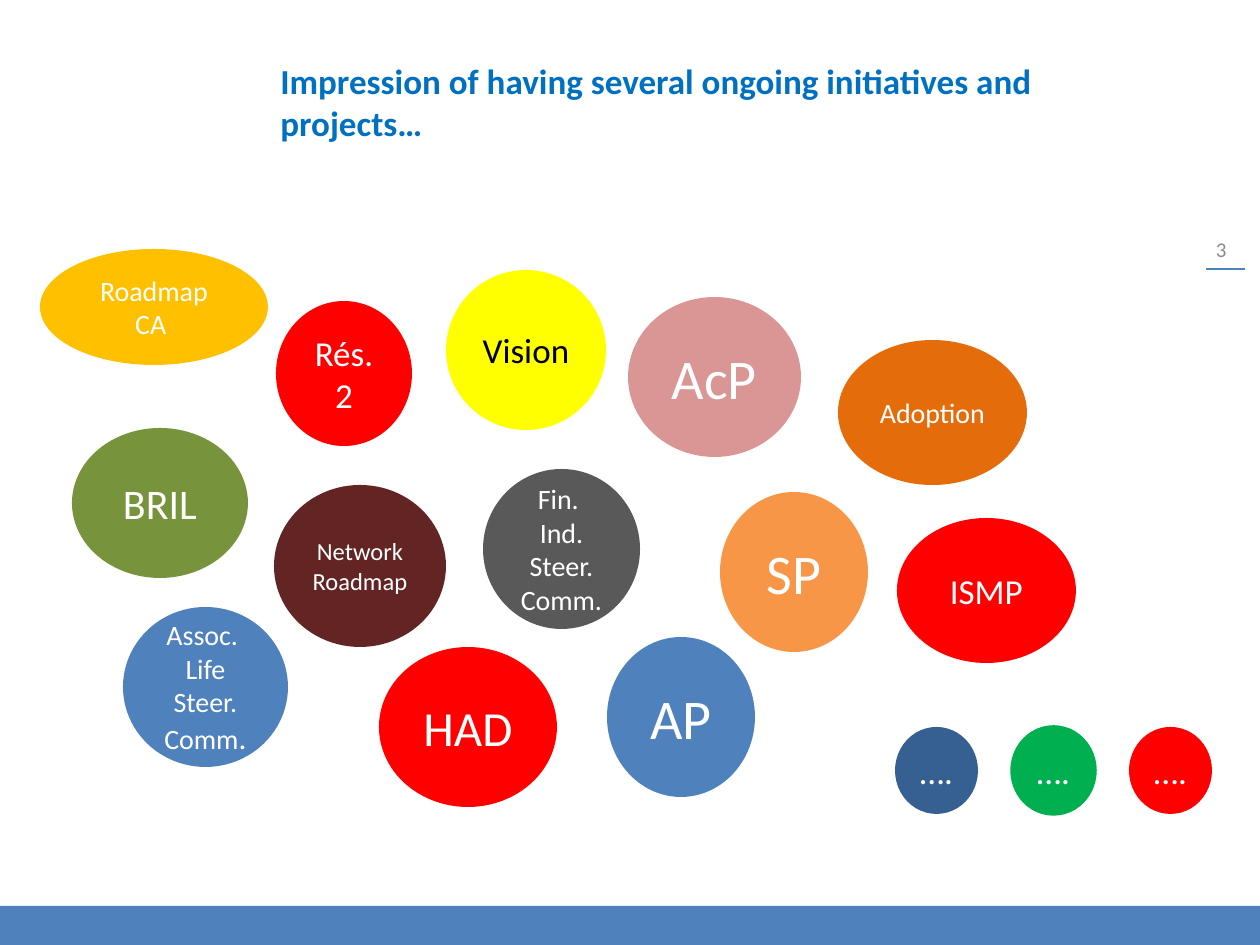
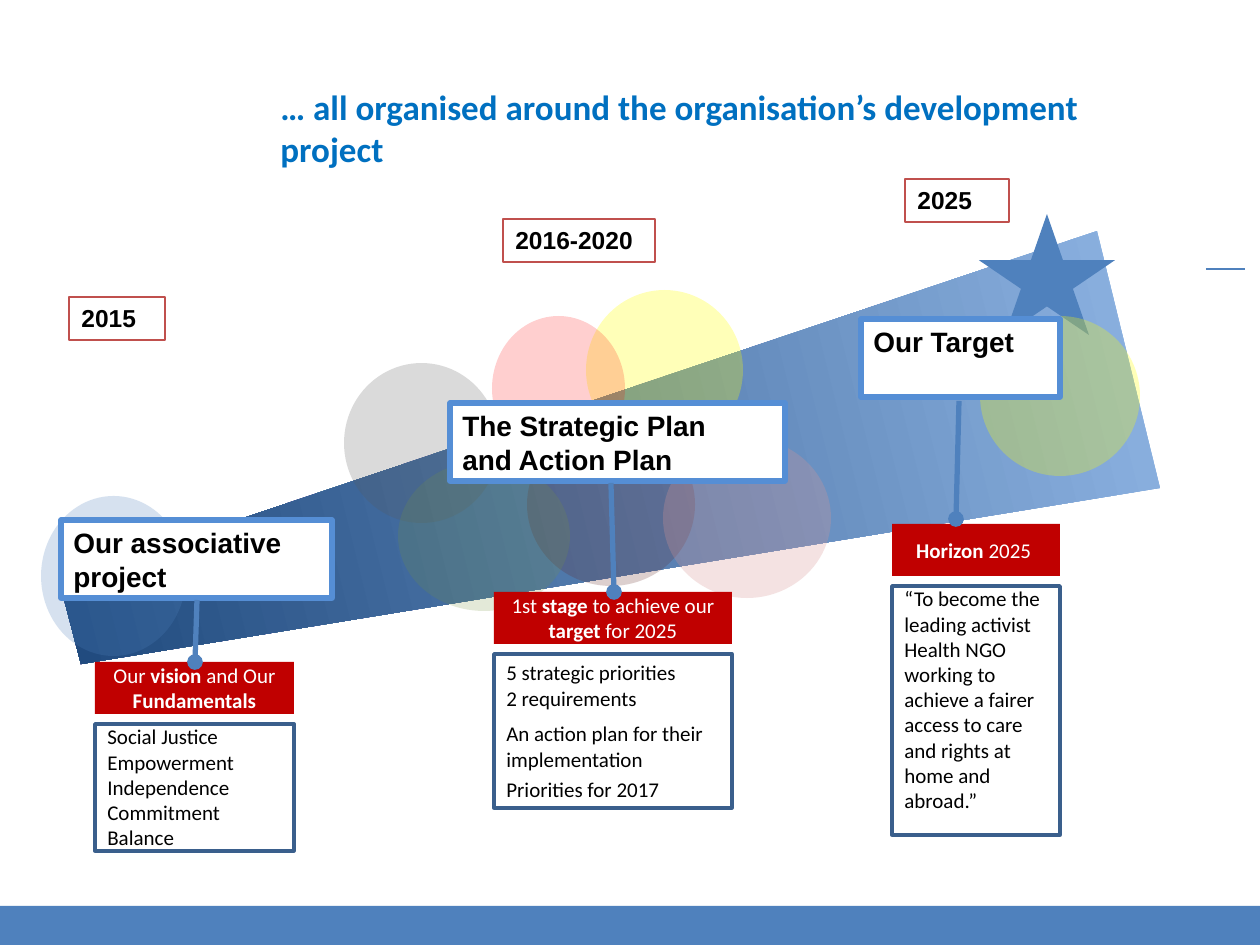
from dataclasses import dataclass

import lxml.etree
import pptx
import pptx.dml.color
import pptx.enum.shapes
import pptx.enum.text
import pptx.oxml.ns
import pptx.util

SCALE = 914400 / 126
KIND = pptx.enum.shapes.MSO_SHAPE
ALIGN = pptx.enum.text.PP_ALIGN
ANCHOR = pptx.enum.text.MSO_ANCHOR


@dataclass(frozen=True)
class Theme:
    blue: str = "4F81BD"
    title: str = "0070C0"
    white: str = "FFFFFF"
    black: str = "000000"
    grey: str = "8C8C8C"
    red: str = "FF0000"
    deep: str = "C00000"
    brick: str = "C0504D"
    frame: str = "558ED5"
    edge: str = "3A5F8C"
    yellow: str = "FFFF00"
    wine: str = "632523"
    coal: str = "595959"
    olive: str = "77933C"
    rose: str = "D99694"
    gold: str = "FFC000"
    peach: str = "F79646"
    rust: str = "E46C0A"
    navy: str = "376092"
    green: str = "00B050"
    light: str = "8EB4E3"
    dark: str = "1F497D"
    body: str = "Calibri"
    head: str = "Arial"
    giant: int = 32
    huge: int = 28
    large: int = 24
    big: int = 20
    mark: int = 18
    label: int = 16
    year: int = 14
    small: int = 12


T = Theme()


@dataclass(frozen=True)
class Box:
    x: int
    y: int
    w: int
    h: int


@dataclass(frozen=True)
class Blob:
    box: Box
    fill: str
    text: str = ""
    size: int = T.big
    ink: str = T.white
    alpha: int = 100
    line: str | None = None


@dataclass(frozen=True)
class Stage:
    """A label, the stem below it, and the red head and card it leads to."""
    label: Box
    name: str
    stem: tuple[int, int, int, int]
    head: Box
    claim: str
    depth: int
    text: str
    inset: int = 0
    gaps: tuple[int, ...] = ()


def emu(px: float) -> int:
    return round(px * SCALE)


def color(code: str) -> pptx.dml.color.RGBColor:
    return pptx.dml.color.RGBColor.from_string(code)


def place(box: Box) -> list[int]:
    return [emu(n) for n in (box.x, box.y, box.w, box.h)]


def draw(slide, kind, box: Box, fill: str | None = None, line: str | None = None,
         width: float = 2, alpha: int = 100):
    shape = slide.shapes.add_shape(kind, *place(box))
    shape.shadow.inherit = False
    if fill:
        shape.fill.solid()
        shape.fill.fore_color.rgb = color(fill)
    else:
        shape.fill.background()
    if alpha < 100:
        tint = shape.element.spPr.find(".//" + pptx.oxml.ns.qn("a:srgbClr"))
        lxml.etree.SubElement(tint, pptx.oxml.ns.qn("a:alpha"), val=str(alpha * 1000))
    if line:
        shape.line.color.rgb = color(line)
        shape.line.width = pptx.util.Pt(width)
    else:
        shape.line.fill.background()
    return shape


def write(shape, text: str, *, size: int, font: str = T.body, ink: str = T.black,
          bold: bool = False, align=ALIGN.LEFT, anchor=ANCHOR.TOP,
          mark: int | None = None, inset: int = 6, gaps: tuple[int, ...] = ()) -> None:
    """Fill a shape; parts between ** are bold, or of size mark if that is given."""
    frame = shape.text_frame
    frame.word_wrap = True
    frame.vertical_anchor = anchor
    frame.margin_top = emu(inset)
    for i, row in enumerate(text.split("\n")):
        para = frame.paragraphs[0] if i == 0 else frame.add_paragraph()
        para.alignment = align
        if i < len(gaps) and gaps[i]:
            para.space_before = pptx.util.Pt(gaps[i])
        for j, part in enumerate(row.split("**")):
            if not part:
                continue
            run = para.add_run()
            run.text = part
            odd = j % 2 == 1
            run.font.name = font
            run.font.size = pptx.util.Pt(mark if odd and mark else size)
            run.font.bold = bold or (odd and not mark)
            run.font.color.rgb = color(ink)


def note(slide, box: Box, text: str, **form) -> None:
    write(slide.shapes.add_textbox(*place(box)), text, **form)


def rule(slide, ends: tuple[int, int, int, int], width: float, dot: bool = False) -> None:
    line = slide.shapes.add_connector(
        pptx.enum.shapes.MSO_CONNECTOR.STRAIGHT, *[emu(n) for n in ends])
    line.line.color.rgb = color(T.blue)
    line.line.width = pptx.util.Pt(width)
    qn = pptx.oxml.ns.qn
    if dot:
        stroke = line.element.spPr.find(qn("a:ln"))
        lxml.etree.SubElement(stroke, qn("a:tailEnd"), type="oval")
    lxml.etree.SubElement(line.element.spPr, qn("a:effectLst"))


def start(deck):
    """Add a slide with the shared rule and bottom band."""
    slide = deck.slides.add_slide(deck.slide_layouts[6])
    rule(slide, (1206, 269, 1245, 269), 1)
    draw(slide, KIND.RECTANGLE, Box(0, 906, 1260, 39), T.blue)
    return slide


def title(slide, top: int, text: str) -> None:
    note(slide, Box(268, top, 917, 97), text, size=T.big, ink=T.title, bold=True)


def bubble(slide, blob: Blob) -> None:
    shape = draw(slide, KIND.OVAL, blob.box, blob.fill, blob.line, alpha=blob.alpha)
    if blob.text:
        write(shape, blob.text, size=blob.size, ink=blob.ink, mark=T.mark,
              align=ALIGN.CENTER, anchor=ANCHOR.MIDDLE)


def wedge(slide) -> None:
    pen = slide.shapes.build_freeform(1097, 231, scale=SCALE)
    pen.add_line_segments([(59, 580), (81, 664), (1160, 488)], close=True)
    shape = pen.convert_to_shape()
    shape.shadow.inherit = False
    shape.line.fill.background()
    shape.fill.gradient()
    shape.fill.gradient_angle = 194
    for stop, code in zip(shape.fill.gradient_stops, (T.light, T.dark)):
        stop.color.rgb = color(code)


def column(slide, stage: Stage) -> None:
    label = draw(slide, KIND.RECTANGLE, stage.label, T.white, T.frame, 3)
    write(label, stage.name, size=T.label, font=T.head, bold=True)
    head = draw(slide, KIND.RECTANGLE, stage.head, T.deep)
    write(head, stage.claim, size=T.small, ink=T.white,
          align=ALIGN.CENTER, anchor=ANCHOR.MIDDLE)
    under = Box(stage.head.x, stage.head.y + 62, stage.head.w, stage.depth)
    card = draw(slide, KIND.RECTANGLE, under, None, T.edge)
    write(card, stage.text, size=T.small, inset=stage.inset, gaps=stage.gaps)
    rule(slide, stage.stem, 3, dot=True)


TOPICS = [
    Blob(Box(446, 270, 160, 160), T.yellow, "Vision", ink=T.black),
    Blob(Box(274, 485, 172, 162), T.wine, "Network Roadmap", T.year),
    Blob(Box(897, 518, 179, 145), T.red, "ISMP"),
    Blob(Box(123, 607, 165, 160), T.blue, "Assoc. \nLife\nSteer.\nComm**.**", T.label),
    Blob(Box(40, 249, 228, 116), T.gold, "Roadmap CA ", T.label),
    Blob(Box(483, 469, 157, 160), T.coal, "Fin. \nInd.\nSteer.\nComm.", T.label),
    Blob(Box(379, 647, 178, 160), T.red, "HAD", T.huge),
    Blob(Box(72, 428, 176, 150), T.olive, "BRIL", T.large),
    Blob(Box(607, 637, 148, 160), T.blue, "AP", T.giant),
    Blob(Box(720, 492, 148, 160), T.peach, "SP", T.giant),
    Blob(Box(628, 297, 173, 160), T.rose, "AcP", T.giant),
    Blob(Box(838, 340, 189, 145), T.rust, "Adoption", T.label),
    Blob(Box(276, 301, 136, 145), T.red, "Rés. 2"),
] + [
    Blob(Box(895 + 117 * i, 727, 83, 87), fill, "….", line=line)
    for i, (fill, line) in enumerate([(T.navy, None), (T.green, T.green), (T.red, None)])
]

VEILS = [
    Blob(Box(980, 316, 160, 160), T.yellow, alpha=28),
    Blob(Box(586, 290, 157, 160), T.yellow, alpha=28),
    Blob(Box(527, 423, 168, 163), T.wine, alpha=22),
    Blob(Box(344, 363, 155, 160), T.coal, alpha=22),
    Blob(Box(398, 461, 172, 150), T.olive, alpha=20),
    Blob(Box(663, 438, 168, 160), T.rose, alpha=27),
    Blob(Box(492, 316, 133, 145), T.red, alpha=19),
    Blob(Box(41, 496, 145, 160), T.blue, alpha=23),
]

YEARS = [
    (Box(69, 297, 96, 43), "2015"),
    (Box(503, 219, 152, 43), "2016-2020"),
    (Box(905, 179, 104, 43), "2025"),
]

STAGES = [
    Stage(Box(861, 319, 199, 78), "Our Target", (959, 401, 956, 519),
          Box(892, 524, 168, 52), "**Horizon** 2025 ", 249,
          "“To become the leading activist Health NGO working to achieve "
          "a fairer access to care and rights at home and abroad.”"),
    Stage(Box(61, 520, 271, 78), "Our associative project", (197, 600, 195, 662),
          Box(95, 662, 199, 52), "Our **vision** and Our **Fundamentals**", 127,
          "Social Justice\nEmpowerment\nIndependence\nCommitment\nBalance"),
    Stage(Box(450, 403, 335, 78), "The Strategic Plan\nand Action Plan",
          (611, 483, 614, 592), Box(494, 592, 238, 52),
          "1st **stage** to achieve our **target** for 2025", 154,
          "5 strategic priorities\n2 requirements\n"
          "An action plan for their implementation\nPriorities for 2017",
          6, (0, 0, 6, 3)),
]


def many(deck) -> None:
    """Draw the slide of scattered initiatives."""
    slide = start(deck)
    note(slide, Box(945, 224, 294, 50), "3", size=T.small, ink=T.grey,
         align=ALIGN.RIGHT, anchor=ANCHOR.MIDDLE)
    for blob in TOPICS:
        bubble(slide, blob)
    title(slide, 53, "Impression of having several ongoing initiatives and\nprojects…")


def journey(deck) -> None:
    """Draw the slide that leads from 2015 to the 2025 target."""
    slide = start(deck)
    wedge(slide)
    draw(slide, KIND.STAR_5_POINT, Box(979, 214, 136, 121), T.blue)
    for box, text in YEARS:
        shape = draw(slide, KIND.RECTANGLE, box, None, T.brick, 1.5)
        write(shape, text, size=T.year, font=T.head, bold=True)
    title(slide, 79, "… all organised around the organisation’s development project")
    for blob in VEILS:
        bubble(slide, blob)
    for stage in STAGES:
        column(slide, stage)


def main() -> None:
    deck = pptx.Presentation()
    deck.slide_width, deck.slide_height = emu(1260), emu(945)
    many(deck)
    journey(deck)
    deck.save("out.pptx")


if __name__ == "__main__":
    main()
